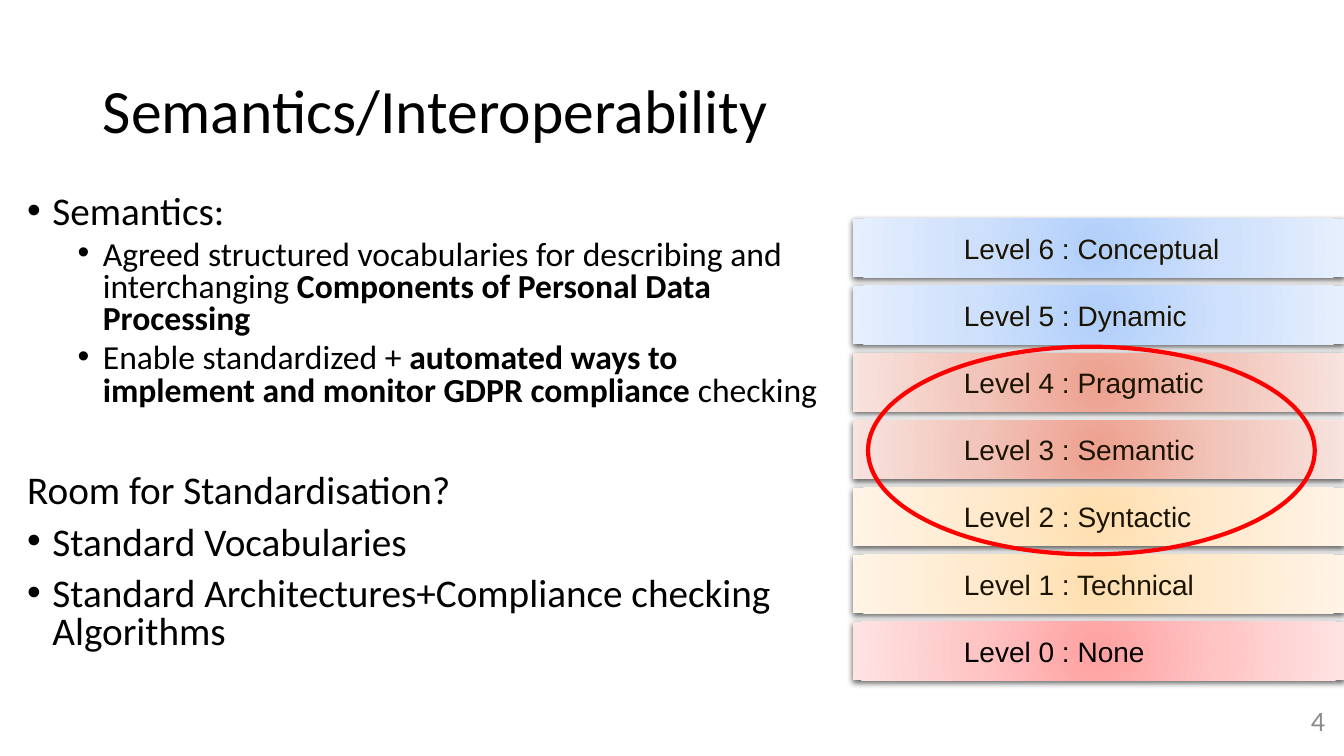
from pptx import Presentation
from pptx.dml.color import RGBColor
from pptx.enum import shapes, text
from pptx.oxml import parse_xml
from pptx.oxml.ns import nsdecls
from pptx.util import Inches, Pt

TITLE = "Semantics/Interoperability"
BODY = [
    (0, True, 10, [("Semantics:", False)]),
    (1, True, 5, [
        ("Agreed structured vocabularies for describing and interchanging ", False),
        ("Components of Personal Data Processing", True)]),
    (1, True, 5, [
        ("Enable standardized + ", False),
        ("automated ways to implement and monitor GDPR compliance ", True),
        ("checking", False)]),
    (0, False, 47, [("Room for Standardisation?", False)]),
    (0, True, 10, [("Standard Vocabularies", False)]),
    (0, True, 10, [("Standard Architectures+Compliance checking Algorithms", False)]),
]
BLUE = ("B1CFFB", "CEE0FC", "E6EFFD")
CORAL = ("EDA08E", "F2C5BB", "F8E3DE")
AMBER = ("FFDFAF", "FFEACE", "FFF4E7")
ROSE = ("FFA0A0", "FFC5C5", "FFE3E3")
LEVELS = [
    ("Level 6 : Conceptual", BLUE, "1A1300"),
    ("Level 5 : Dynamic", BLUE, "1A1300"),
    ("Level 4 : Pragmatic", CORAL, "1A1300"),
    ("Level 3 : Semantic", CORAL, "1A1300"),
    ("Level 2 : Syntactic", AMBER, "1A1300"),
    ("Level 1 : Technical", AMBER, "1A1300"),
    ("Level 0 : None", ROSE, "000000"),
]
LEVEL_LEFT, LEVEL_TOP, LEVEL_W, LEVEL_H, LEVEL_STEP = 8.46, 2.17, 4.87, 0.58, 2 / 3


def rgb(color):
    return RGBColor.from_string(color)


def box(left, top, width, height):
    return [Inches(v) for v in (left, top, width, height)]


def place(sp, *bounds):
    sp.left, sp.top, sp.width, sp.height = box(*bounds)


def add_run(p, words, size, font="Calibri", color="000000", bold=False):
    r = p.add_run()
    r.text = words
    r.font.size, r.font.name, r.font.bold = Pt(size), font, bold
    r.font.color.rgb = rgb(color)


def set_bullet(p, level, bulleted):
    pPr = p._p.get_or_add_pPr()
    hang = Inches(0.25) if bulleted else 0
    pPr.set("marL", str(Inches(0.5 * level) + hang))
    pPr.set("indent", str(-hang))
    if bulleted:
        pPr.append(parse_xml(f'<a:buFont {nsdecls("a")} typeface="Arial"/>'))
        pPr.append(parse_xml(f'<a:buChar {nsdecls("a")} char="•"/>'))
    else:
        pPr.append(parse_xml(f'<a:buNone {nsdecls("a")}/>'))


def radial_fill(sp, colors):
    stops = "".join(
        f'<a:gs pos="{i * 50000}"><a:srgbClr val="{c}"/></a:gs>'
        for i, c in enumerate(colors))
    sp._element.spPr.append(parse_xml(
        f'<a:gradFill {nsdecls("a")} rotWithShape="1"><a:gsLst>{stops}</a:gsLst>'
        '<a:path path="circle">'
        '<a:fillToRect l="50000" t="50000" r="50000" b="50000"/>'
        '</a:path></a:gradFill>'))


def drop_shadow(sp):
    sp._element.spPr.append(parse_xml(
        f'<a:effectLst {nsdecls("a")}>'
        f'<a:outerShdw blurRad="{Pt(4.5)}" dist="{Pt(1.5)}" dir="5400000" '
        'algn="ctr" rotWithShape="0"><a:srgbClr val="000000">'
        '<a:alpha val="63000"/></a:srgbClr></a:outerShdw></a:effectLst>'))


prs = Presentation()
prs.slide_width, prs.slide_height = Inches(13.33), Inches(7.5)
s = prs.slides.add_slide(prs.slide_layouts[1])

title, body = s.placeholders
place(title, 0.92, 0.4, 11.5, 1.45)
tf = title.text_frame
tf.auto_size = text.MSO_AUTO_SIZE.NONE
tf.vertical_anchor = text.MSO_ANCHOR.MIDDLE
p = tf.paragraphs[0]
p.alignment, p.line_spacing = text.PP_ALIGN.LEFT, 0.9
add_run(p, TITLE, 44)

place(body, 0.17, 1.89, 8.1, 4.76)
tf = body.text_frame
tf.auto_size = text.MSO_AUTO_SIZE.NONE
for i, (level, bulleted, before, runs) in enumerate(BODY):
    p = tf.add_paragraph() if i else tf.paragraphs[0]
    p.level, p.line_spacing, p.space_before = level, 0.8, Pt(before)
    set_bullet(p, level, bulleted)
    for words, bold in runs:
        add_run(p, words, 24 if level else 28, bold=bold)

stack = s.shapes.add_group_shape()
for i, (label, colors, ink) in enumerate(LEVELS):
    sp = stack.shapes.add_shape(
        shapes.MSO_SHAPE.RECTANGLE,
        *box(LEVEL_LEFT, LEVEL_TOP + i * LEVEL_STEP, LEVEL_W, LEVEL_H))
    radial_fill(sp, colors)
    sp.line.fill.background()
    drop_shadow(sp)
    tf = sp.text_frame
    tf.margin_left = Inches(1.1)
    tf.vertical_anchor = text.MSO_ANCHOR.MIDDLE
    p = tf.paragraphs[0]
    p.alignment = text.PP_ALIGN.LEFT
    add_run(p, label, 20, "Arial", ink)

ring = s.shapes.add_shape(shapes.MSO_SHAPE.OVAL, *box(8.61, 3.44, 4.43, 2.06))
ring.shadow.inherit = False
ring.fill.background()
ring.line.color.rgb, ring.line.width = rgb("FF0000"), Pt(3)

number = s.shapes.add_textbox(*box(10.24, 6.95, 3, 0.4))
tf = number.text_frame
tf.word_wrap = True
tf.vertical_anchor = text.MSO_ANCHOR.MIDDLE
p = tf.paragraphs[0]
p.alignment = text.PP_ALIGN.RIGHT
add_run(p, "4", 20, color="8C8C8C")

prs.save("out.pptx")
